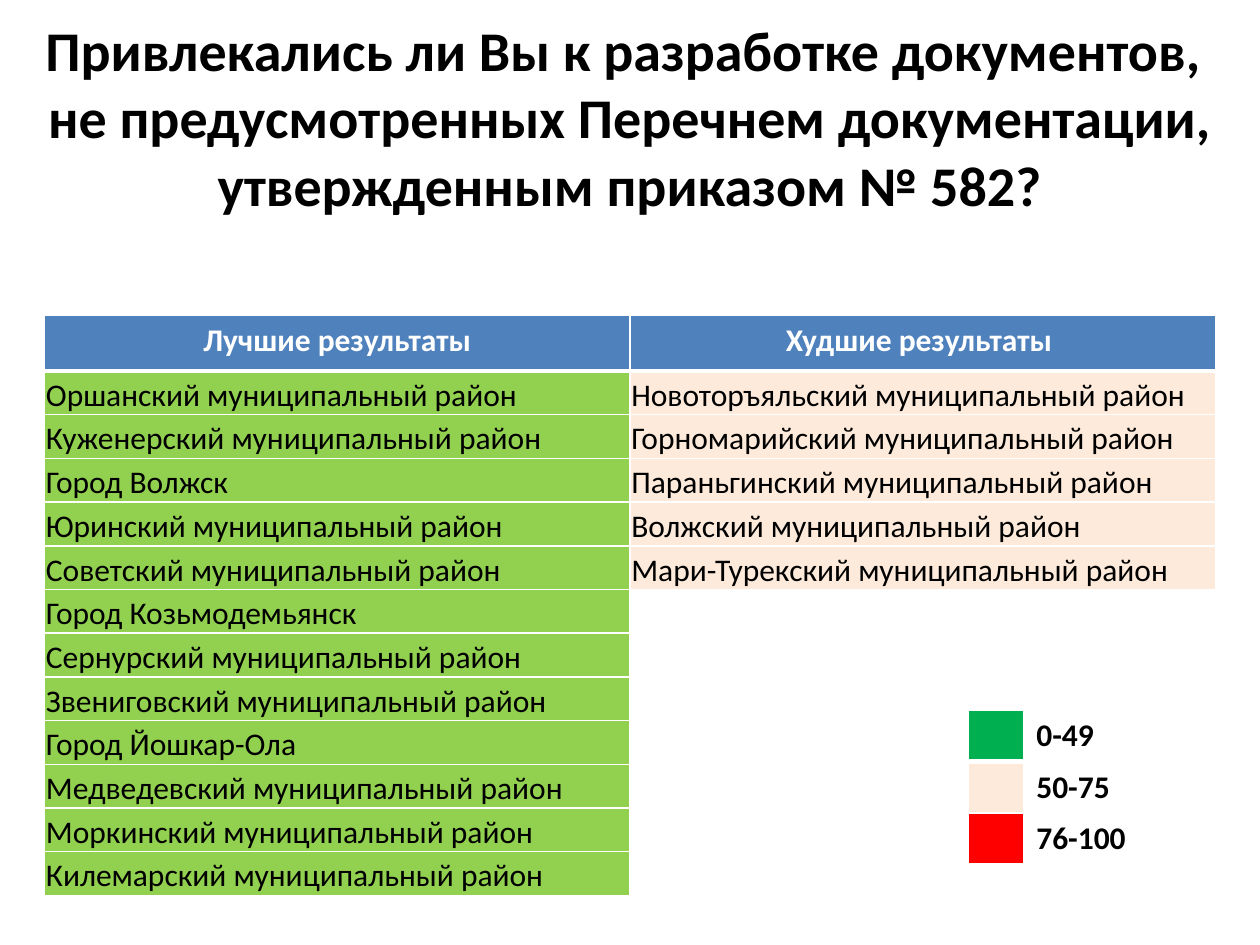
from itertools import zip_longest

from lxml.etree import fromstring
from pptx import Presentation
from pptx.dml.color import RGBColor
from pptx.enum.text import MSO_ANCHOR as Anchor, PP_ALIGN as Align
from pptx.util import Pt

FONT = "Calibri"
WHITE = RGBColor(0xFF, 0xFF, 0xFF)
BLACK = RGBColor(0, 0, 0)
BLUE = RGBColor(0x4F, 0x81, 0xBD)
LIME = RGBColor(0x92, 0xD0, 0x50)
GREEN = RGBColor(0x00, 0xB0, 0x50)
PEACH = RGBColor(0xFD, 0xEA, 0xDA)
RED = RGBColor(0xFF, 0, 0)
DRAWING_NS = "http://schemas.openxmlformats.org/drawingml/2006/main"

# Content
TITLE = [
    "Привлекались ли Вы к разработке документов, ",
    "не предусмотренных Перечнем документации, утвержденным приказом № 582?",
]
HEADERS = ["Лучшие результаты", "Худшие результаты "]
BEST = [
    "Оршанский муниципальный район",
    "Куженерский муниципальный район",
    "Город Волжск",
    "Юринский муниципальный район",
    "Советский муниципальный район",
    "Город Козьмодемьянск",
    "Сернурский муниципальный район",
    "Звениговский муниципальный район",
    "Город Йошкар-Ола",
    "Медведевский муниципальный район",
    "Моркинский муниципальный район",
    "Килемарский муниципальный район",
]
WORST = [
    "Новоторъяльский муниципальный район",
    "Горномарийский муниципальный район",
    "Параньгинский муниципальный район",
    "Волжский муниципальный район",
    "Мари-Турекский муниципальный район",
]
LEGEND = [(GREEN, "0-49"), (PEACH, "50-75"), (RED, "76-100")]


def add_run(paragraph, text, size, color, bold):
    run = paragraph.add_run()
    run.text = text
    font = run.font
    font.name, font.size, font.bold = FONT, Pt(size), bold
    font.color.rgb = color


def set_borders(cell, top, bottom):
    properties = cell._tc.get_or_add_tcPr()
    widths = [("lnL", 1), ("lnR", 1), ("lnT", top), ("lnB", bottom)]
    for index, (tag, width) in enumerate(widths):
        properties.insert(index, fromstring(
            f'<a:{tag} xmlns:a="{DRAWING_NS}" w="{Pt(width)}"><a:solidFill>'
            f'<a:srgbClr val="{WHITE}"/></a:solidFill></a:{tag}>'))


def fill_cell(cell, row, text, fill, color=BLACK, bold=False, align=Align.LEFT):
    if fill is None:
        cell.fill.background()
    else:
        cell.fill.solid()
        cell.fill.fore_color.rgb = fill
    # The line under the first row is heavier than the others
    set_borders(cell, top=3 if row == 1 else 1, bottom=3 if row == 0 else 1)
    paragraph = cell.text_frame.paragraphs[0]
    paragraph.alignment = align
    if text:
        add_run(paragraph, text, 18, color, bold)


def add_table(slide, left, top, widths, heights):
    table = slide.shapes.add_table(
        len(heights), len(widths), Pt(left), Pt(top),
        Pt(sum(widths)), Pt(sum(heights))).table
    for column, width in zip(table.columns, widths):
        column.width = Pt(width)
    for row, height in zip(table.rows, heights):
        row.height = Pt(height)
    return table


def add_title(slide):
    frame = slide.shapes.add_textbox(Pt(0), Pt(21.6), Pt(720), Pt(90)).text_frame
    frame.word_wrap = True
    frame.vertical_anchor = Anchor.MIDDLE
    paragraph = frame.paragraphs[0]
    paragraph.alignment = Align.CENTER
    for index, line in enumerate(TITLE):
        if index:
            paragraph.add_line_break()
        add_run(paragraph, line, 32, BLACK, True)


def add_results(slide):
    table = add_table(slide, 25.5, 180, [334.5] * 2, [32] + [25] * len(BEST))
    for column, header in enumerate(HEADERS):
        fill_cell(table.cell(0, column), 0, header, BLUE, WHITE, True, Align.CENTER)
    for row, names in enumerate(zip_longest(BEST, WORST), start=1):
        for column, (name, fill) in enumerate(zip(names, (LIME, PEACH))):
            cell = table.cell(row, column)
            cell.margin_left = cell.margin_right = cell.margin_top = Pt(0.75)
            cell.margin_bottom = Pt(0)
            cell.vertical_anchor = Anchor.BOTTOM
            fill_cell(cell, row, name, fill if name else None)


def add_legend(slide):
    table = add_table(slide, 553, 406, [32, 115.5], [29.3] * len(LEGEND))
    for row, (color, label) in enumerate(LEGEND):
        fill_cell(table.cell(row, 0), row, "", color)
        fill_cell(table.cell(row, 1), row, label, WHITE, bold=True)


def main():
    presentation = Presentation()
    presentation.slide_width, presentation.slide_height = Pt(720), Pt(540)
    slide = presentation.slides.add_slide(presentation.slide_layouts[6])
    add_title(slide)
    add_results(slide)
    add_legend(slide)
    presentation.save("out.pptx")


if __name__ == "__main__":
    main()
